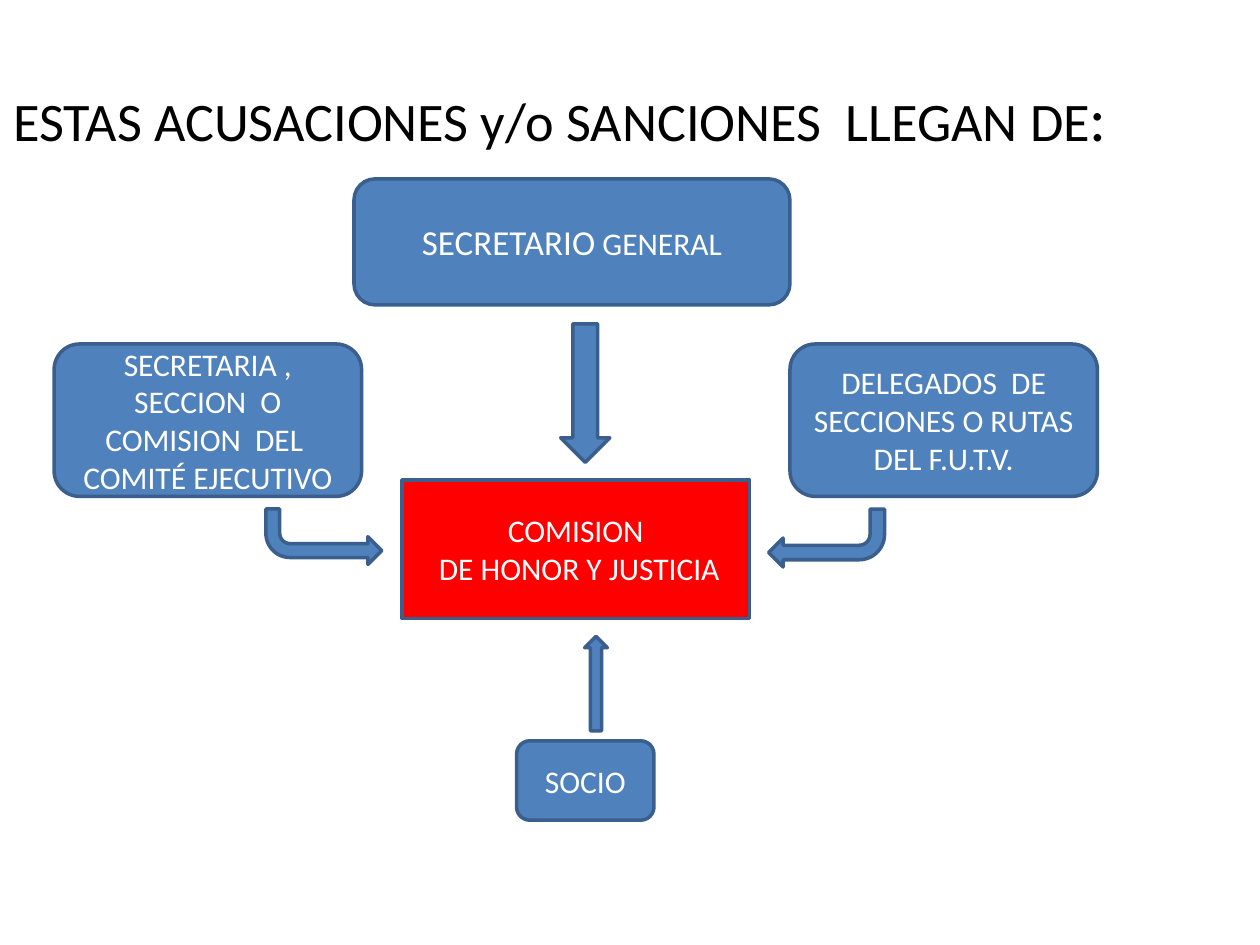
from pptx import Presentation
from pptx.dml.color import RGBColor
from pptx.enum.shapes import MSO_SHAPE
from pptx.enum.text import MSO_ANCHOR, PP_ALIGN
from pptx.oxml.ns import qn
from pptx.util import Inches, Pt

BLUE, RED, OUTLINE = "4F81BD", "FF0000", "3A5F8C"
WHITE, BLACK = "FFFFFF", "000000"


def color(hex_string):
    return RGBColor.from_string(hex_string)


class SlideBuilder:
    font_name = "Calibri"
    line_width = Pt(2)

    def __init__(self, slide):
        self.slide = slide

    def add_text(self, shape, paragraphs, text_color):
        """Each paragraph is a list of (text, size) runs."""
        frame = shape.text_frame
        frame.word_wrap = True
        frame.vertical_anchor = MSO_ANCHOR.MIDDLE
        for index, runs in enumerate(paragraphs):
            paragraph = frame.add_paragraph() if index else frame.paragraphs[0]
            paragraph.alignment = PP_ALIGN.CENTER
            for text, size in runs:
                run = paragraph.add_run()
                run.text = text
                run.font.name = self.font_name
                run.font.size = Pt(size)
                run.font.color.rgb = color(text_color)

    def title(self, position, runs):
        text_box = self.slide.shapes.add_textbox(*map(Inches, position))
        self.add_text(text_box, [runs], BLACK)

    def shape(self, kind, position, fill=BLUE):
        shape = self.slide.shapes.add_shape(kind, *map(Inches, position))
        shape.shadow.inherit = False
        shape.fill.solid()
        shape.fill.fore_color.rgb = color(fill)
        shape.line.color.rgb = color(OUTLINE)
        shape.line.width = self.line_width
        return shape

    def box(self, position, paragraphs, kind=MSO_SHAPE.ROUNDED_RECTANGLE, fill=BLUE):
        self.add_text(self.shape(kind, position, fill), paragraphs, WHITE)

    def arrow(self, kind, position, rotation=0, flip_vertical=False):
        arrow = self.shape(kind, position)
        arrow.rotation = rotation
        if flip_vertical:
            arrow._element.spPr.find(qn("a:xfrm")).set("flipV", "1")


def main():
    presentation = Presentation()
    presentation.slide_width = Inches(10)
    presentation.slide_height = Inches(7.5)
    builder = SlideBuilder(presentation.slides.add_slide(presentation.slide_layouts[6]))

    # Commission that receives the accusations
    builder.box((3.19, 3.81, 2.76, 1.1),
                [[("COMISION", 18)], [(" DE HONOR Y JUSTICIA", 18)]],
                MSO_SHAPE.RECTANGLE, RED)

    # Side sources share one size and one row
    side_top, side_width, side_height = 2.73, 2.44, 1.21
    side_sources = [
        (0.43, ["SECRETARIA , SECCION  O COMISION  DEL  COMITÉ EJECUTIVO"]),
        (6.27, ["DELEGADOS  DE SECCIONES O RUTAS", "DEL F.U.T.V."]),
    ]
    for left, lines in side_sources:
        builder.box((left, side_top, side_width, side_height),
                    [[(line, 18)] for line in lines])

    # Title
    builder.title((0, 0.3, 9, 1.25),
                  [("ESTAS ACUSACIONES y/o SANCIONES  LLEGAN DE", 31), (": ", 36)])

    # Top and bottom sources
    builder.box((2.81, 1.42, 3.46, 1), [[("SECRETARIO", 20), (" GENERAL", 18)]])
    builder.box((4.1, 5.88, 1.09, 0.63), [[("SOCIO", 18)]])

    # Arrows towards the commission
    builder.arrow(MSO_SHAPE.BENT_ARROW, (2.11, 4.04, 0.92, 0.44), flip_vertical=True)
    builder.arrow(MSO_SHAPE.BENT_ARROW, (6.1, 4.04, 0.92, 0.46), rotation=180)
    builder.arrow(MSO_SHAPE.DOWN_ARROW, (4.45, 2.57, 0.39, 1.1))
    builder.arrow(MSO_SHAPE.UP_ARROW, (4.64, 5.05, 0.18, 0.75))

    presentation.save("out.pptx")


if __name__ == "__main__":
    main()
